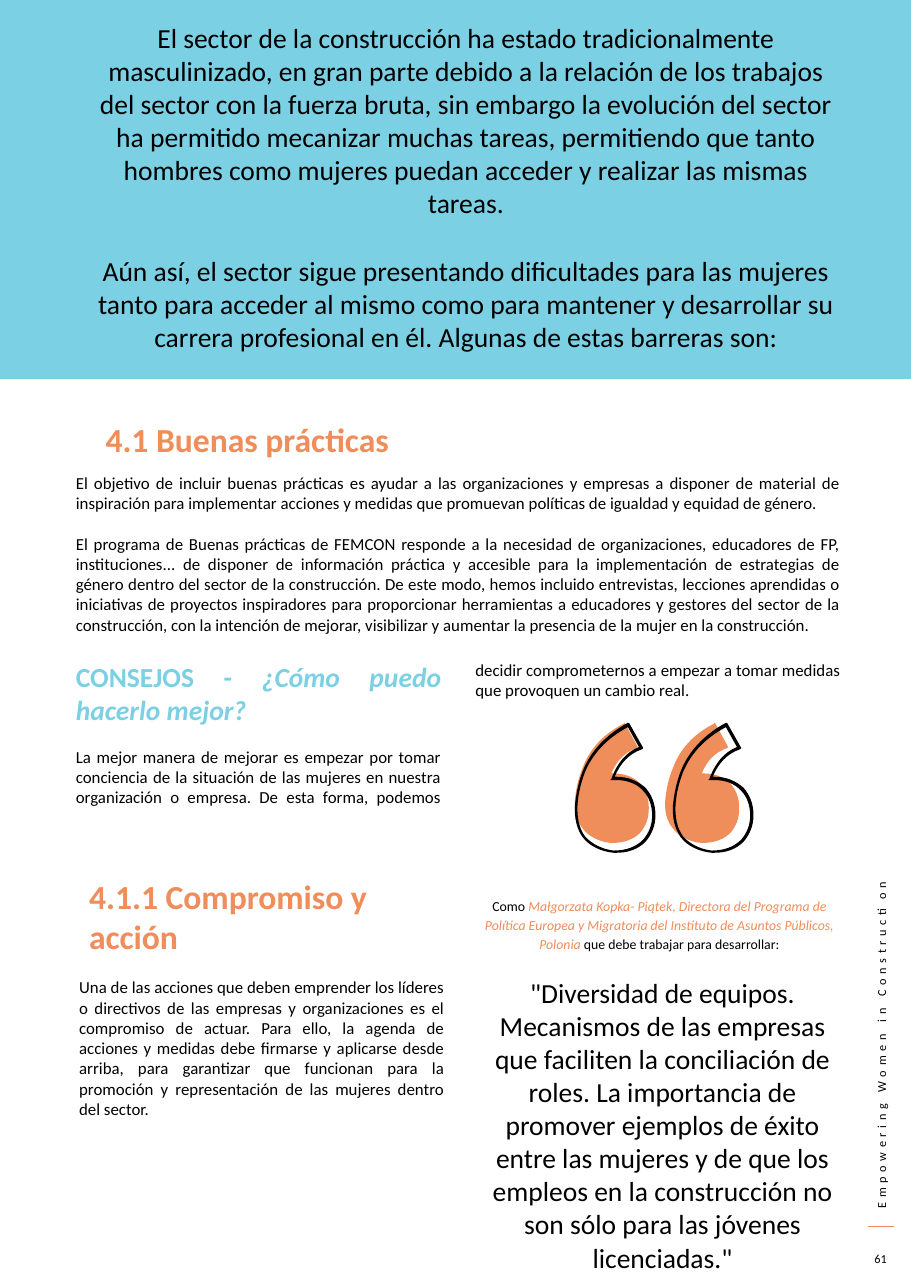
from lxml import etree
from pptx import Presentation
from pptx.dml.color import RGBColor
from pptx.enum.shapes import MSO_CONNECTOR as CONN, MSO_SHAPE as SHAPE
from pptx.enum.text import MSO_ANCHOR as ANCHOR, PP_ALIGN as ALIGN
from pptx.oxml.ns import qn
from pptx.util import Inches, Pt

BLACK, ORANGE, BLUE = "000000", "EF8D5B", "7CD0E4"

SOLID_QUOTE = [
    [(0.35, 1.09)],
    [(0.34, 1.09), (0.33, 1.09), (0.32, 1.09)],
    [(0.22, 1.08), (0.12, 1.03), (0.07, 0.96)],
    [(0.01, 0.89), (-0.01, 0.8), (0, 0.69)],
    [(0.01, 0.6), (0.03, 0.5), (0.07, 0.41)],
    [(0.13, 0.24), (0.26, 0.1), (0.44, 0.01)],
    [(0.45, 0)], [(0.57, 0.22)], [(0.56, 0.23)],
    [(0.45, 0.27), (0.38, 0.34), (0.33, 0.46)],
    [(0.34, 0.46)],
    [(0.45, 0.46), (0.53, 0.49), (0.59, 0.55)],
    [(0.64, 0.61), (0.67, 0.68), (0.67, 0.77)],
    [(0.67, 0.86), (0.65, 0.93), (0.59, 1)],
    [(0.53, 1.06), (0.44, 1.09), (0.35, 1.09)],
]
RING_INNER = [
    [(0.09, 1.03)],
    [(0.15, 1.1), (0.25, 1.15), (0.35, 1.16)],
    [(0.46, 1.16), (0.55, 1.13), (0.62, 1.06)],
    [(0.67, 1), (0.7, 0.93), (0.7, 0.84)],
    [(0.7, 0.75), (0.67, 0.67), (0.62, 0.62)],
    [(0.56, 0.55), (0.47, 0.52), (0.37, 0.52)],
    [(0.32, 0.52)], [(0.33, 0.51)],
    [(0.38, 0.37), (0.46, 0.27), (0.58, 0.22)],
    [(0.48, 0.04)],
    [(0.29, 0.14), (0.16, 0.28), (0.09, 0.45)],
    [(0.02, 0.63), (-0.02, 0.88), (0.09, 1.03)],
]
RING_OUTER = [
    [(0.38, 1.18)],
    [(0.37, 1.18), (0.36, 1.18), (0.35, 1.18)],
    [(0.24, 1.17), (0.13, 1.12), (0.07, 1.04)],
    [(0.02, 0.97), (-0.01, 0.87), (0, 0.74)],
    [(0.01, 0.65), (0.03, 0.54), (0.07, 0.44)],
    [(0.14, 0.26), (0.28, 0.11), (0.48, 0)],
    [(0.49, 0)], [(0.62, 0.23)], [(0.61, 0.24)],
    [(0.49, 0.28), (0.41, 0.37), (0.36, 0.49)],
    [(0.37, 0.49)],
    [(0.49, 0.49), (0.57, 0.53), (0.64, 0.59)],
    [(0.7, 0.66), (0.73, 0.74), (0.73, 0.84)],
    [(0.73, 0.93), (0.7, 1.01), (0.64, 1.08)],
    [(0.57, 1.15), (0.48, 1.18), (0.38, 1.18)],
]


def color(value):
    return RGBColor.from_string(value)


class Page:
    font = "Calibri"

    def __init__(self, prs):
        self.s = prs.slides.add_slide(prs.slide_layouts[6])

    def paint(self, sp, fill):
        sp.shadow.inherit = False
        sp.fill.solid()
        sp.fill.fore_color.rgb = color(fill)
        sp.line.fill.background()

    def rect(self, at, fill):
        sp = self.s.shapes.add_shape(SHAPE.RECTANGLE, *map(Inches, at))
        self.paint(sp, fill)

    def line(self, start, end, stroke):
        sp = self.s.shapes.add_connector(CONN.STRAIGHT, *map(Inches, start + end))
        sp.line.color.rgb = color(stroke)
        sp.line.width = Pt(1)
        etree.SubElement(sp._element.spPr, qn("a:effectLst"))

    def quote_marks(self, left, top, step, contours, fill):
        outlines = [[[(Inches(left + shift + x), Inches(top + y)) for x, y in part]
                     for part in contour] for shift in (step, 0) for contour in contours]
        builder = self.s.shapes.build_freeform(*outlines[0][0][0], scale=1.0)
        for i, outline in enumerate(outlines):
            if i:
                builder.move_to(*outline[0][0])
            builder.add_line_segments([part[-1] for part in outline[1:]], close=True)
        sp = builder.convert_to_shape()
        parts = [part for outline in outlines for part in outline[1:]]
        for segment, part in zip(list(sp._element.iter(qn("a:lnTo"))), parts):
            if len(part) == 3:
                segment.tag = qn("a:cubicBezTo")
                for i, (x, y) in enumerate(part[:2]):
                    pt = etree.Element(qn("a:pt"), x=str(x - sp.left), y=str(y - sp.top))
                    segment.insert(i, pt)
        self.paint(sp, fill)

    def text(self, at, paragraphs, size=11, ink=BLACK, bold=False, align=ALIGN.LEFT,
             anchor=ANCHOR.TOP, gap=0, leading=None, columns=1, spacing=0, rotation=0):
        sp = self.s.shapes.add_textbox(*map(Inches, at))
        sp.rotation = rotation
        tf = sp.text_frame
        tf.word_wrap = True
        tf.vertical_anchor = anchor
        if columns > 1:
            tf._txBody.bodyPr.set("numCol", str(columns))
            tf._txBody.bodyPr.set("spcCol", str(Inches(0.31)))
        for i, runs in enumerate(paragraphs):
            p = tf.add_paragraph() if i else tf.paragraphs[0]
            layout = dict(alignment=align, line_spacing=leading,
                          space_before=Pt(gap if i else 0))
            for name, value in layout.items():
                setattr(p, name, value)
            for content, changes in [(runs, {})] if isinstance(runs, str) else runs:
                r = p.add_run()
                r.text = content
                look = dict(size=size, bold=bold, italic=False, ink=ink) | changes
                r.font.color.rgb = color(look.pop("ink"))
                look.update(name=self.font, size=Pt(look["size"]))
                for name, value in look.items():
                    setattr(r.font, name, value)
                if spacing:
                    r._r.get_or_add_rPr().set("spc", str(spacing * 100))


def main():
    prs = Presentation()
    prs.slide_width, prs.slide_height = Inches(8.27), Inches(11.69)
    page = Page(prs)

    page.text((6.27, 9.21, 3.47, 0.24), ["Empowering Women in Construction"],
              size=8, spacing=3, rotation=270)
    page.line((7.88, 11.13), (8.12, 11.13), ORANGE)
    page.rect((0, -0.05, 8.27, 3.49), BLUE)
    page.text((0.73, 0.43, 7, 2.53), [
        "El sector de la construcción ha estado tradicionalmente masculinizado, en gran parte "
        "debido a la relación de los trabajos del sector con la fuerza bruta, sin embargo la "
        "evolución del sector ha permitido mecanizar muchas tareas, permitiendo que tanto "
        "hombres como mujeres puedan acceder y realizar las mismas tareas.",
        "Aún así, el sector sigue presentando dificultades para las mujeres tanto para acceder "
        "al mismo como para mantener y desarrollar su carrera profesional en él. Algunas de "
        "estas barreras son:",
    ], size=18, align=ALIGN.CENTER, anchor=ANCHOR.MIDDLE, gap=22.7)
    page.text((7.8, 11.28, 0.39, 0.29), ["61"], size=8, align=ALIGN.CENTER,
              anchor=ANCHOR.MIDDLE)

    body = dict(align=ALIGN.JUSTIFY, gap=13.4)
    heading = dict(size=22, ink=ORANGE, bold=True)
    page.text((0.59, 4.24, 7.14, 1.6), [
        "El objetivo de incluir buenas prácticas es ayudar a las organizaciones y empresas a "
        "disponer de material de inspiración para implementar acciones y medidas que promuevan "
        "políticas de igualdad y equidad de género.",
        "El programa de Buenas prácticas de FEMCON responde a la necesidad de organizaciones, "
        "educadores de FP, instituciones... de disponer de información práctica y accesible "
        "para la implementación de estrategias de género dentro del sector de la construcción. "
        "De este modo, hemos incluido entrevistas, lecciones aprendidas o iniciativas de "
        "proyectos inspiradores para proporcionar herramientas a educadores y gestores del "
        "sector de la construcción, con la intención de mejorar, visibilizar y aumentar la "
        "presencia de la mujer en la construcción.",
    ], **body)
    page.text((0.86, 3.75, 3.57, 0.48), ["4.1 Buenas prácticas"], **heading)
    page.text((0.62, 8.82, 7.14, 2.53), [
        "Una de las acciones que deben emprender los líderes o directivos de las empresas y "
        "organizaciones es el compromiso de actuar. Para ello, la agenda de acciones y medidas "
        "debe firmarse y aplicarse desde arriba, para garantizar que funcionan para la "
        "promoción y representación de las mujeres dentro del sector.",
    ], columns=2, **body)
    page.text((0.71, 7.9, 3.25, 0.48), ["4.1.1 Compromiso y acción"], **heading)

    page.quote_marks(5.22, 6.56, 0.82, [SOLID_QUOTE], ORANGE)
    page.quote_marks(5.22, 6.56, 0.89, [RING_INNER, RING_OUTER], "010101")
    page.text((4.23, 8.81, 3.57, 1.09), [
        '"Diversidad de equipos. Mecanismos de las empresas que faciliten la conciliación de '
        "roles. La importancia de promover ejemplos de éxito entre las mujeres y de que los "
        'empleos en la construcción no son sólo para las jóvenes licenciadas."',
    ], size=18, align=ALIGN.CENTER)
    page.text((4.2, 8.08, 3.57, 0.43), [[
        ("Como ", {}),
        ("Małgorzata Kopka- Piątek, Directora del Programa de Política Europea y Migratoria "
         "del Instituto de Asuntos Públicos, Polonia ", {"ink": ORANGE, "italic": True}),
        ("que debe trabajar para desarrollar:", {}),
    ]], size=9, align=ALIGN.CENTER, leading=1.15)
    advice = dict(size=18, ink=BLUE, bold=True)
    page.text((0.59, 5.94, 7.14, 1.6), [
        [("CONSEJOS - ", advice), ("¿Cómo puedo hacerlo mejor?", advice | {"italic": True})],
        "La mejor manera de mejorar es empezar por tomar conciencia de la situación de las "
        "mujeres en nuestra organización o empresa. De esta forma, podemos decidir "
        "comprometernos a empezar a tomar medidas que provoquen un cambio real.",
    ], columns=2, **body)

    prs.save("out.pptx")


if __name__ == "__main__":
    main()
